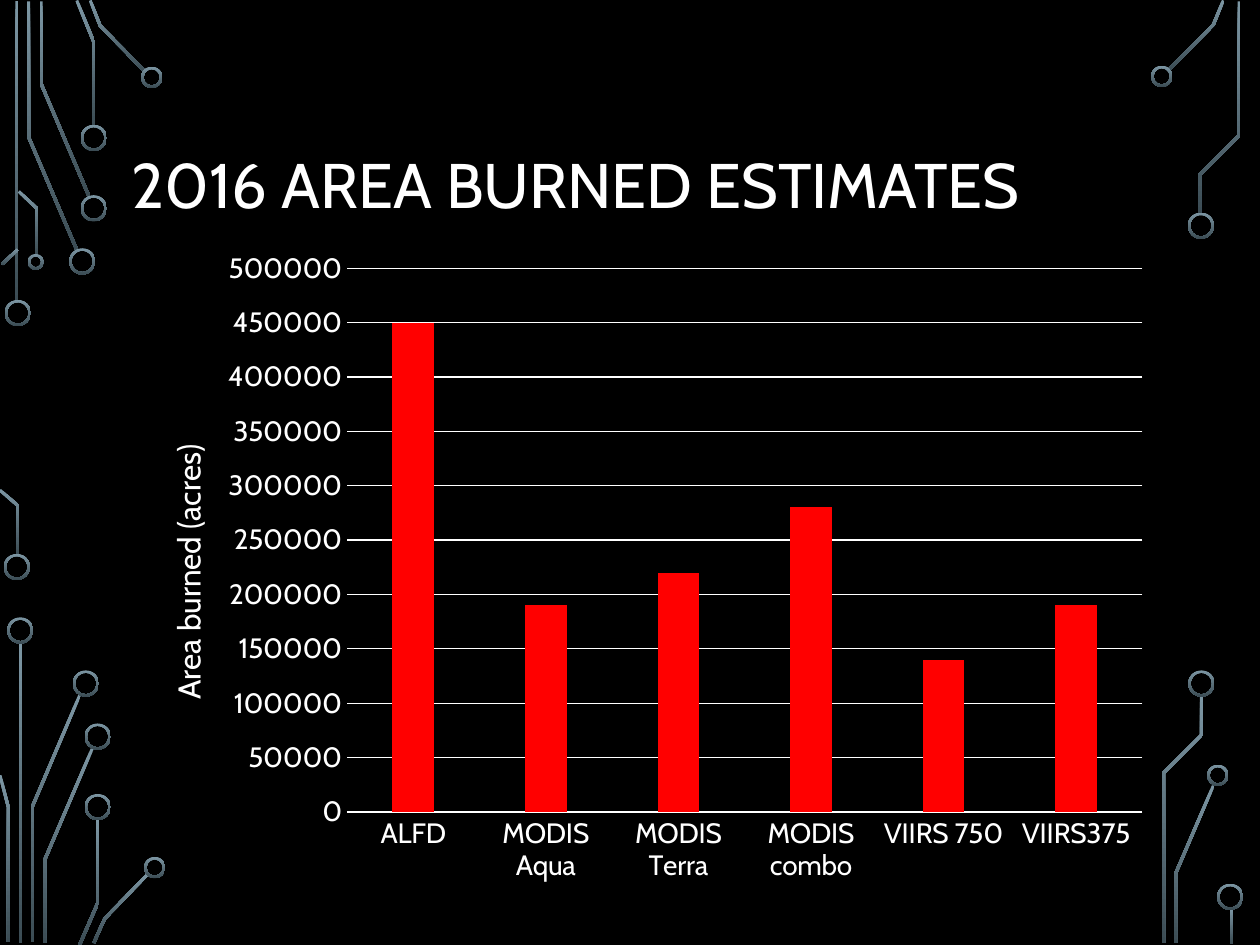
from math import hypot

from lxml import etree
from pptx import Presentation
from pptx.chart.data import CategoryChartData
from pptx.dml.color import RGBColor
from pptx.enum.chart import XL_CHART_TYPE, XL_TICK_MARK
from pptx.enum.shapes import MSO_SHAPE
from pptx.enum.text import MSO_ANCHOR, PP_ALIGN
from pptx.oxml.ns import qn
from pptx.util import Cm, Pt

COLUMNS = XL_CHART_TYPE.COLUMN_CLUSTERED
NO_TICKS = XL_TICK_MARK.NONE
DONUT = MSO_SHAPE.DONUT
MIDDLE = MSO_ANCHOR.MIDDLE
LEFT = PP_ALIGN.LEFT

FONT = "Cabin"
WHITE, BLACK, RED = "FFFFFF", "000000", "FF0000"
TRACE_COLORS = ("7C96A3", "3B4C54")
TRACE_WIDTH = 0.06
LARGE, MEDIUM, SMALL = 0.53, 0.43, 0.32

# Centre lines of the circuit traces, in centimetres
TRACES = [
    # top left
    [(0.34, 0.03), (0.34, 6.1)],
    [(1.55, 5.04), (0.58, 2.77), (0.58, 0.03)],
    [(1.8, 3.97), (0.83, 1.69), (0.83, 0.03)],
    [(1.89, 2.54), (1.89, 0.84), (1.55, 0.01)],
    [(2.93, 1.45), (2.02, 0.52), (1.82, 0.01)],
    [(0.04, 5.33), (0.36, 5.03)],
    [(0.74, 5.16), (0.74, 4.2), (0.38, 3.86)],
    # bottom left
    [(0.36, 11.2), (0.36, 10.19), (0, 9.88)],
    [(0.41, 12.95), (0.41, 19.02)],
    [(0.65, 19), (0.65, 16.27), (1.61, 14.01)],
    [(0.17, 19), (0.17, 16.28), (0, 15.63)],
    [(0.9, 19.02), (0.9, 17.34), (1.87, 15.07)],
    [(1.61, 19.04), (1.97, 18.21), (1.97, 16.51)],
    [(1.89, 19.01), (2.11, 18.52), (3, 17.6)],
    # top right
    [(23.56, 1.41), (24.46, 0.5), (24.66, 0.01)],
    [(24.19, 4.29), (24.19, 3.52), (24.98, 2.73), (24.98, 0.03)],
    # bottom right
    [(23.7, 19.02), (23.7, 17.61), (24.46, 15.84)],
    [(23.46, 19.02), (23.46, 15.58), (24.22, 14.82), (24.22, 14.02)],
    [(24.83, 18.31), (24.83, 19.02)],
]

# Ring centres by diameter, in centimetres
RINGS = {
    LARGE: [(0.36, 6.31), (0.34, 11.43), (1.66, 5.27), (1.89, 4.2), (1.89, 2.78),
            (0.41, 12.71), (1.73, 13.78), (1.97, 14.85), (1.97, 16.27),
            (24.21, 4.55), (24.22, 13.78), (24.8, 18.08)],
    MEDIUM: [(3.06, 1.56), (3.12, 17.49), (23.42, 1.54), (24.55, 15.63)],
    SMALL: [(0.72, 5.28)],
}

BURNED_ACRES = {
    "ALFD": 450000,
    "MODIS Aqua": 190000,
    "MODIS Terra": 220000,
    "MODIS combo": 280000,
    "VIIRS 750": 140000,
    "VIIRS375": 190000,
}


def color(value):
    return RGBColor.from_string(value)


def set_font(font, size):
    values = {"name": FONT, "size": Pt(size), "bold": False}
    for name, value in values.items():
        setattr(font, name, value)
    font.color.rgb = color(WHITE)


def style_trace(shape):
    """Fill with the top-to-bottom gradient, without line or shadow."""
    shape.shadow.inherit = False
    shape.line.fill.background()
    shape.fill.gradient()
    shape.fill.gradient_angle = 270
    for stop, value in zip(shape.fill.gradient_stops, TRACE_COLORS):
        stop.color.rgb = color(value)


def ribbon_side(points, offset):
    """Shift a polyline sideways, with mitred corners."""
    normals = []
    for (x1, y1), (x2, y2) in zip(points, points[1:]):
        length = hypot(x2 - x1, y2 - y1)
        normals.append(((y1 - y2) / length, (x2 - x1) / length))
    side = []
    befores, afters = normals[:1] + normals, normals + normals[-1:]
    for (x, y), (ax, ay), (bx, by) in zip(points, befores, afters):
        scale = offset / (1 + ax * bx + ay * by)
        side.append((Cm(x + (ax + bx) * scale), Cm(y + (ay + by) * scale)))
    return side


def add_trace(page, points):
    half = TRACE_WIDTH / 2
    outline = ribbon_side(points, half) + ribbon_side(points, -half)[::-1]
    builder = page.shapes.build_freeform(*outline[0])
    builder.add_line_segments(outline[1:], close=True)
    style_trace(builder.convert_to_shape())


def add_ring(page, x, y, diameter):
    corner = Cm(x - diameter / 2), Cm(y - diameter / 2)
    ring = page.shapes.add_shape(DONUT, *corner, Cm(diameter), Cm(diameter))
    ring.adjustments[0] = 0.05 / diameter
    style_trace(ring)


def format_title(title, text):
    box = {"left": Cm(2.39), "top": Cm(1.73), "width": Cm(20.62), "height": Cm(4.11)}
    for name, value in box.items():
        setattr(title, name, value)
    frame = title.text_frame
    frame.text = text
    frame.vertical_anchor = MIDDLE
    para = frame.paragraphs[0]
    para.alignment = LEFT
    para.line_spacing = 0.9
    set_font(para.runs[0].font, 36)


def set_layout(parent, index, **values):
    """Place a chart part by fractions of the chart area."""
    for old in parent.findall(qn("c:layout")):
        parent.remove(old)
    layout = etree.Element(qn("c:layout"))
    parent.insert(index, layout)
    manual = etree.SubElement(layout, qn("c:manualLayout"))
    for name, value in values.items():
        etree.SubElement(manual, qn("c:" + name)).set("val", str(value))


def format_axis(axis, size):
    axis.major_tick_mark = NO_TICKS
    axis.minor_tick_mark = NO_TICKS
    set_font(axis.tick_labels.font, size)


def set_line(line):
    line.color.rgb = color(WHITE)
    line.width = Pt(0.75)


def add_burned_chart(page):
    data = CategoryChartData()
    data.categories = list(BURNED_ACRES)
    data.add_series("Series 1", list(BURNED_ACRES.values()))
    chart = page.shapes.add_chart(
        COLUMNS, Cm(2.62), Cm(4.88), Cm(20.83), Cm(13.21), data).chart
    chart.has_legend = False
    chart.has_title = False
    set_font(chart.font, 10)

    plot = chart.plots[0]
    plot.gap_width = 219
    plot.overlap = -27
    plot.vary_by_categories = False
    fill = plot.series[0].format.fill
    fill.solid()
    fill.fore_color.rgb = color(RED)

    format_axis(chart.category_axis, 16)
    set_line(chart.category_axis.format.line)
    values = chart.value_axis
    format_axis(values, 16)
    values.minimum_scale, values.maximum_scale, values.major_unit = 0, 500000, 50000
    values.format.line.fill.background()
    set_line(values.major_gridlines.format.line)

    frame = values.axis_title.text_frame
    frame.text = "Area burned (acres)"
    set_font(frame.paragraphs[0].runs[0].font, 18)
    title = values.axis_title._element
    body = title.find(".//" + qn("a:bodyPr"))
    body.set("rot", "-5400000")
    body.set("vert", "horz")
    set_layout(title, 1, xMode="edge", yMode="edge", x=0.03, y=0.3)
    plot_area = chart._chartSpace.find(".//" + qn("c:plotArea"))
    set_layout(plot_area, 0, layoutTarget="inner", xMode="edge", yMode="edge",
               x=0.21, y=0.04, w=0.77, h=0.83)


def main():
    deck = Presentation()
    deck.slide_width, deck.slide_height = Cm(25.4), Cm(19.05)
    page = deck.slides.add_slide(deck.slide_layouts[5])
    page.background.fill.solid()
    page.background.fill.fore_color.rgb = color(BLACK)
    for points in TRACES:
        add_trace(page, points)
    for diameter, centres in RINGS.items():
        for x, y in centres:
            add_ring(page, x, y, diameter)
    format_title(page.shapes.title, "2016 AREA BURNED ESTIMATES")
    add_burned_chart(page)
    deck.save("out.pptx")


if __name__ == "__main__":
    main()
